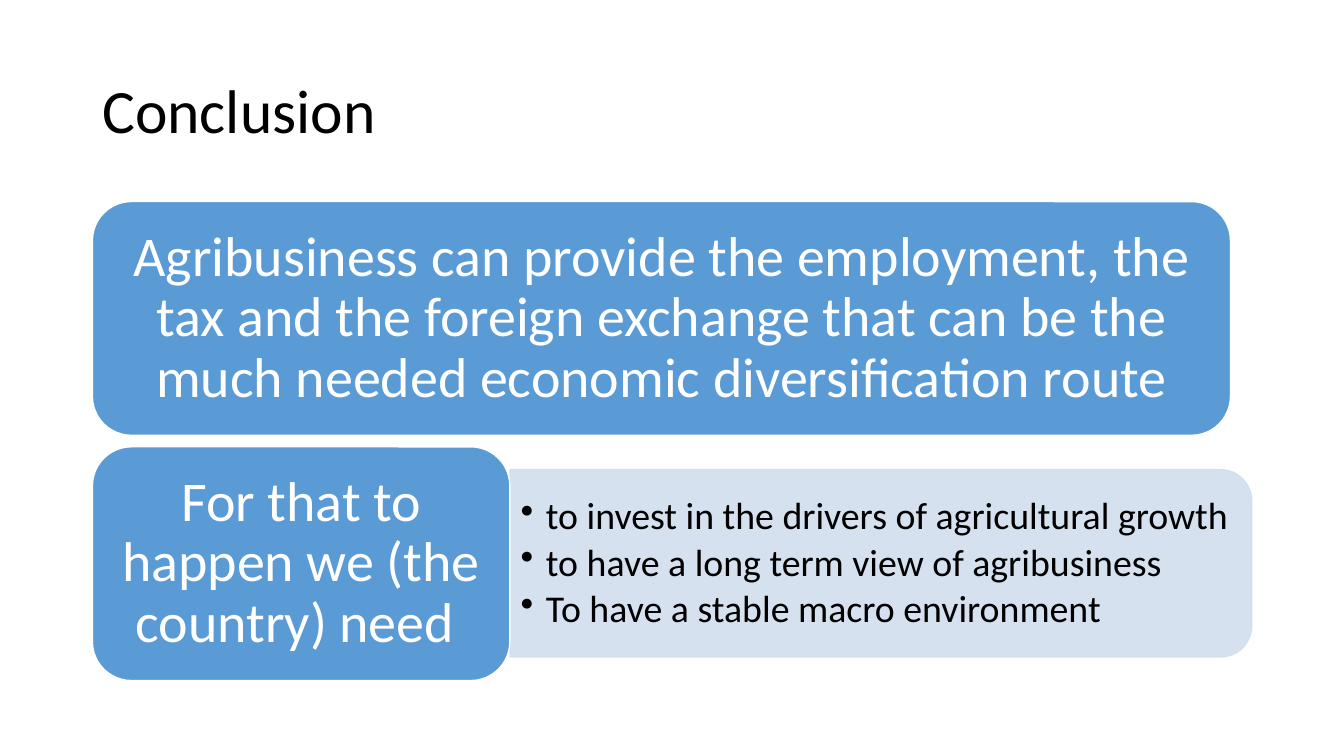
"""Build the conclusion slide on agribusiness."""
import pptx
import pptx.util
import pptx.dml.color
import pptx.enum.shapes
import pptx.enum.text
import pptx.oxml
import pptx.oxml.ns

Cm, Pt = pptx.util.Cm, pptx.util.Pt
RGBColor = pptx.dml.color.RGBColor
SHAPE = pptx.enum.shapes.MSO_SHAPE
ALIGN = pptx.enum.text.PP_ALIGN
BLUE = RGBColor(0x5B, 0x9B, 0xD5)
PALE = RGBColor(0xD2, 0xDE, 0xEF)
WHITE = RGBColor(0xFF, 0xFF, 0xFF)
BLACK = RGBColor(0x00, 0x00, 0x00)


def write(sp, text, size, color=BLACK, align=ALIGN.LEFT, inset=(0.25, 0.13), after=0, bullet=False):
    tf = sp.text_frame
    tf.text = text
    tf.word_wrap = True
    tf.auto_size = pptx.enum.text.MSO_AUTO_SIZE.NONE
    tf.vertical_anchor = pptx.enum.text.MSO_ANCHOR.MIDDLE
    tf.margin_left = tf.margin_right = Cm(inset[0])
    tf.margin_top = tf.margin_bottom = Cm(inset[1])
    for p in tf.paragraphs:
        p.alignment = align
        p.line_spacing = 0.9
        p.space_after = Pt(after)
        font = p.runs[0].font
        font.name, font.size, font.color.rgb = "Calibri", Pt(size), color
        if bullet:
            pPr = p._p.get_or_add_pPr()
            pPr.set("marL", str(Cm(0.64)))
            pPr.set("indent", str(-Cm(0.64)))
            bu = pptx.oxml.parse_xml(f'<a:buChar {pptx.oxml.ns.nsdecls("a")} char="•"/>')
            pPr.append(bu)


def add_box(kind, left, top, width, height, fill, line):
    sp = s.shapes.add_shape(kind, Cm(left), Cm(top), Cm(width), Cm(height))
    sp.shadow.inherit = False
    sp.fill.solid()
    sp.fill.fore_color.rgb = fill
    sp.line.color.rgb = line
    sp.line.width = Pt(1)
    return sp


prs = pptx.Presentation()
prs.slide_width, prs.slide_height = Cm(33.87), Cm(19.05)
s = prs.slides.add_slide(prs.slide_layouts[5])

title = s.shapes.title
title.left, title.top, title.width, title.height = Cm(2.33), Cm(1.01), Cm(29.21), Cm(3.68)
write(title, "Conclusion", 44)

panel = add_box(SHAPE.ROUND_2_SAME_RECTANGLE, 19.84, 4.85, 4.72, 18.69, PALE, PALE)
panel.rotation = 90
for clr in panel._element.spPr.iter(pptx.oxml.ns.qn("a:srgbClr")):
    clr.append(pptx.oxml.parse_xml(f'<a:alpha {pptx.oxml.ns.nsdecls("a")} val="90000"/>'))

needs = s.shapes.add_textbox(Cm(12.85), Cm(12.08), Cm(18.47), Cm(4.26))
write(needs, "to invest in the drivers of agricultural growth\n"
      "to have a long term view of agribusiness\n"
      "To have a stable macro environment",
      27, inset=(0.27, 0.14), after=4, bullet=True)

statements = [
    (5.08, 28.68, "Agribusiness can provide the employment, the tax and the foreign exchange "
                  "that can be the much needed economic diversification route"),
    (11.26, 10.52, "For that to happen we (the country) need "),
]
for top, width, text in statements:
    sp = add_box(SHAPE.ROUNDED_RECTANGLE, 2.33, top, width, 5.89, BLUE, WHITE)
    write(sp, text, 40, color=WHITE, align=ALIGN.CENTER, inset=(0.42, 0.21))

prs.save("out.pptx")
